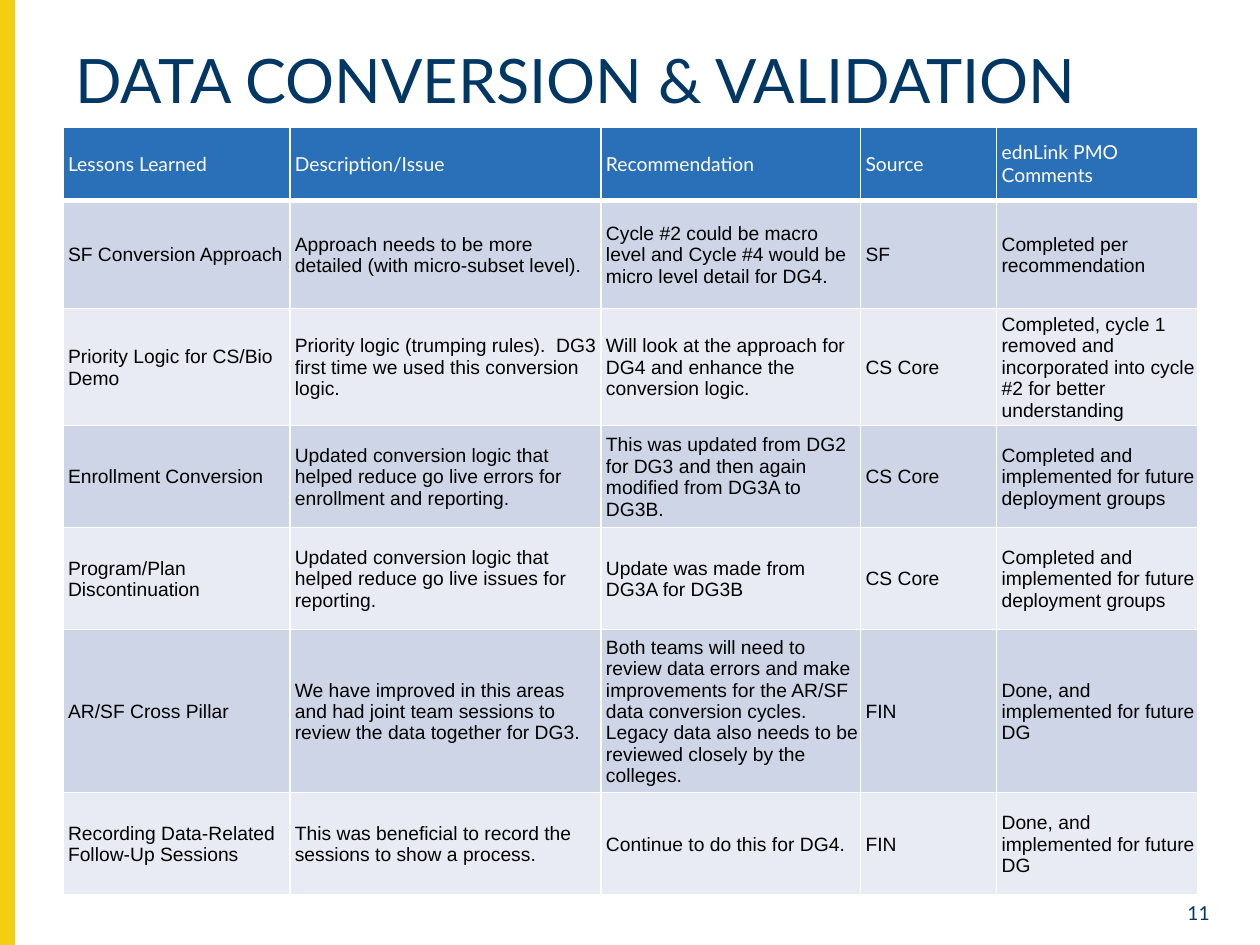
from lxml import etree
from pptx import Presentation
from pptx.dml.color import RGBColor
from pptx.enum import shapes, text
from pptx.oxml.ns import qn
from pptx.util import Inches, Pt

NAVY = RGBColor(0x00, 0x37, 0x64)
YELLOW = RGBColor(0xF4, 0xCE, 0x12)
BLUE = RGBColor(0x2A, 0x70, 0xB8)
BAND_DARK = RGBColor(0xCD, 0xD5, 0xE6)
BAND_LIGHT = RGBColor(0xE8, 0xEB, 0xF3)
WHITE = RGBColor(0xFF, 0xFF, 0xFF)
BLACK = RGBColor(0x00, 0x00, 0x00)

COLUMN_WIDTHS = [1.8, 2.47, 2.06, 1.08, 1.6]
ROW_HEIGHTS = [0.58, 0.86, 0.81, 0.81, 0.81, 0.81, 0.81]
LESSONS = [
    ("Lessons Learned", "Description/Issue", "Recommendation", "Source",
     "ednLink PMO Comments"),
    ("SF Conversion Approach",
     "Approach needs to be more detailed (with micro-subset level).",
     "Cycle #2 could be macro level and Cycle #4 would be micro level detail for DG4.",
     "SF", "Completed per recommendation"),
    ("Priority Logic for CS/Bio Demo",
     "Priority logic (trumping rules).  DG3 first time we used this conversion logic.",
     "Will look at the approach for DG4 and enhance the conversion logic.",
     "CS Core",
     "Completed, cycle 1 removed and incorporated into cycle #2 for better understanding"),
    ("Enrollment Conversion",
     "Updated conversion logic that helped reduce go live errors for enrollment and reporting.",
     "This was updated from DG2 for DG3 and then again modified from DG3A to DG3B.",
     "CS Core", "Completed and implemented for future deployment groups"),
    ("Program/Plan Discontinuation",
     "Updated conversion logic that helped reduce go live issues for reporting.",
     "Update was made from DG3A for DG3B",
     "CS Core", "Completed and implemented for future deployment groups"),
    ("AR/SF Cross Pillar",
     "We have improved in this areas and had joint team sessions to review the data "
     "together for DG3.",
     "Both teams will need to review data errors and make improvements for the AR/SF "
     "data conversion cycles. Legacy data also needs to be reviewed closely by the colleges.",
     "FIN", "Done, and implemented for future DG"),
    ("Recording Data-Related Follow-Up Sessions",
     "This was beneficial to record the sessions to show a process.",
     "Continue to do this for DG4.",
     "FIN", "Done, and implemented for future DG"),
]


def write(text_frame, content, size, font_name, color):
    """Set the text of a one-paragraph frame and format it."""
    text_frame.text = content
    paragraph = text_frame.paragraphs[0]
    font = paragraph.runs[0].font
    font.size = Pt(size)
    font.name = font_name
    font.color.rgb = color
    return paragraph


def set_borders(cell, widths):
    """Draw white borders; widths gives points for left, right, top, bottom."""
    properties = cell._tc.get_or_add_tcPr()
    for side, width in zip("LRTB", widths):
        line = etree.SubElement(properties, qn(f"a:ln{side}"), w=str(Pt(width)))
        fill = etree.SubElement(line, qn("a:solidFill"))
        etree.SubElement(fill, qn("a:srgbClr"), val=str(WHITE))


def add_side_bar(slide, left, top, width, height):
    bar = slide.shapes.add_shape(shapes.MSO_SHAPE.RECTANGLE, left, top, width, height)
    bar.shadow.inherit = False
    bar.fill.solid()
    bar.fill.fore_color.rgb = YELLOW
    bar.line.color.rgb = YELLOW
    bar.line.width = Pt(1)


def place_title(slide, left, top, width, height):
    title = slide.shapes.title
    title.left, title.top, title.width, title.height = left, top, width, height
    frame = title.text_frame
    frame.auto_size = text.MSO_AUTO_SIZE.NONE
    frame.vertical_anchor = text.MSO_ANCHOR.MIDDLE
    paragraph = write(frame, "DATA CONVERSION & VALIDATION", 35, "Lato", NAVY)
    paragraph.alignment = text.PP_ALIGN.LEFT
    paragraph.line_spacing = 0.9


def add_page_number(slide, left, top, width, height):
    frame = slide.shapes.add_textbox(left, top, width, height).text_frame
    frame.word_wrap = True
    frame.vertical_anchor = text.MSO_ANCHOR.MIDDLE
    write(frame, "11", 11, "Lato", NAVY).alignment = text.PP_ALIGN.RIGHT


def format_cell(cell, content, row_index):
    is_header = row_index == 0
    set_borders(cell, (1, 1, 1 if row_index != 1 else 3, 3 if is_header else 1))
    cell.fill.solid()
    cell.vertical_anchor = text.MSO_ANCHOR.MIDDLE
    cell.margin_left = Inches(0.04)
    cell.margin_top = cell.margin_right = Inches(0 if is_header else 0.01)
    cell.margin_bottom = 0
    if is_header:
        cell.fill.fore_color.rgb = BLUE
        write(cell.text_frame, content, 11, "Lato", WHITE)
    else:
        cell.fill.fore_color.rgb = BAND_DARK if row_index % 2 else BAND_LIGHT
        write(cell.text_frame, content, 11, "Arial", BLACK)


def add_lessons_table(slide, left, top, width, height):
    table = slide.shapes.add_table(
        len(LESSONS), len(COLUMN_WIDTHS), left, top, width, height).table
    for column, column_width in zip(table.columns, COLUMN_WIDTHS):
        column.width = Inches(column_width)
    for row_index, (row, contents) in enumerate(zip(table.rows, LESSONS)):
        row.height = Inches(ROW_HEIGHTS[row_index])
        for cell, content in zip(row.cells, contents):
            format_cell(cell, content, row_index)


def main():
    presentation = Presentation()
    presentation.slide_width = Inches(10)
    presentation.slide_height = Inches(7.5)
    slide = presentation.slides.add_slide(presentation.slide_layouts[5])
    add_side_bar(slide, 0, 0, Inches(0.11), presentation.slide_height)
    add_page_number(slide, Inches(9.2), Inches(7.14), Inches(0.5), Inches(0.21))
    place_title(slide, Inches(0.5), Inches(0.32), Inches(9.08), Inches(0.69))
    add_lessons_table(slide, Inches(0.5), Inches(1.01),
                      Inches(sum(COLUMN_WIDTHS)), Inches(sum(ROW_HEIGHTS)))
    presentation.save("out.pptx")


if __name__ == "__main__":
    main()
